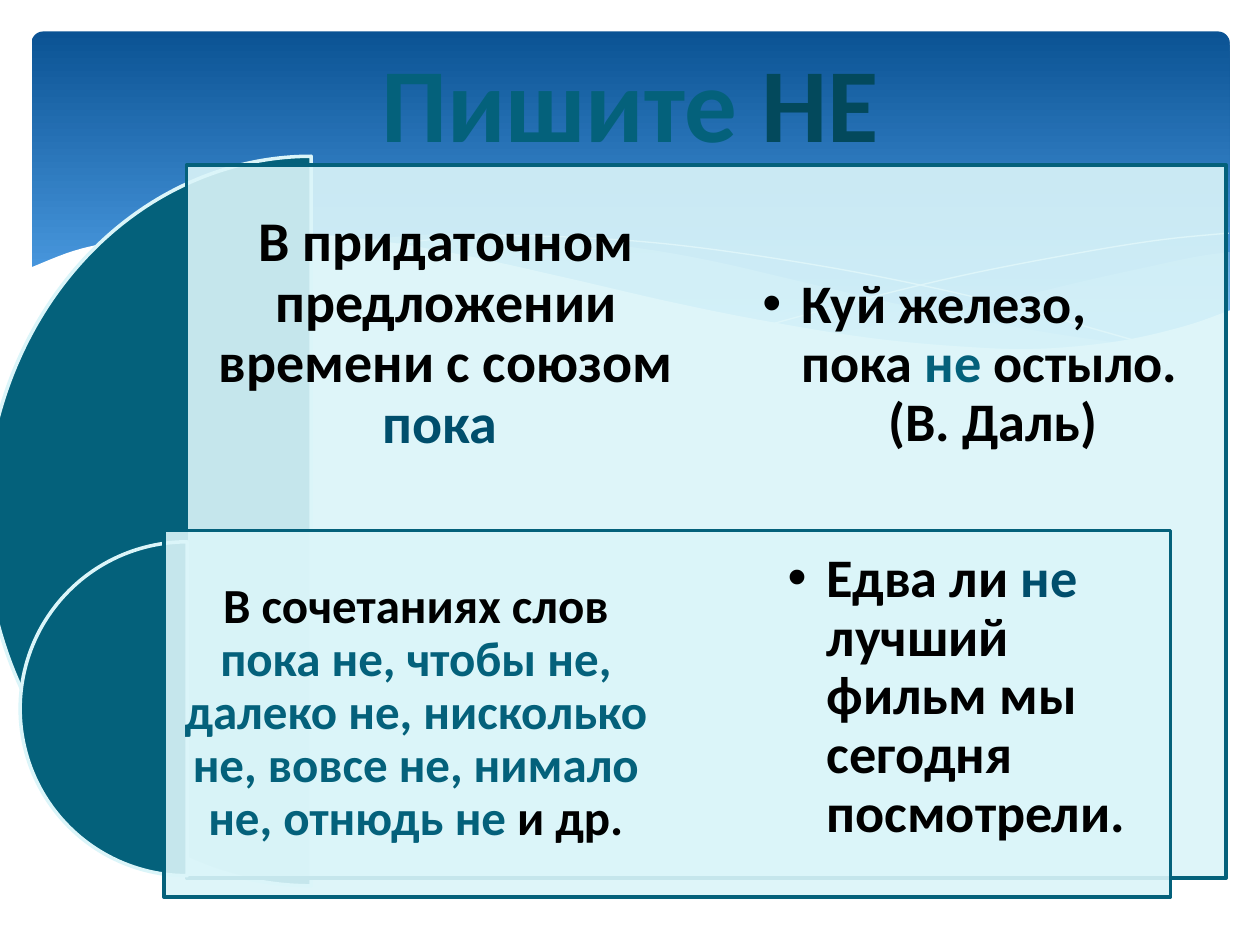
from lxml import etree
from pptx import Presentation
from pptx import util as u
from pptx.dml.color import RGBColor
from pptx.enum import shapes, text
from pptx.oxml.ns import qn

COLS, ROWS = 100, 75
CELL = u.Inches(0.1)
HUES = {"deep": "04617B", "ice": "DBF5F9", "navy": "004E6C", "dusk": "03495C",
        "sky": "0B5394", "azure": "59AAF2", "black": "000000", "white": "FFFFFF"}
KIND = shapes.MSO_SHAPE


def bend(knots, steps=6):
    """Sample a Catmull-Rom curve that runs through all the knots."""
    ends = [knots[0], *knots, knots[-1]]
    dots = [knots[0]]
    for a, b, c, d in zip(ends, ends[1:], ends[2:], ends[3:]):
        for i in range(1, steps + 1):
            t = i / steps
            dots.append(tuple(
                q + t / 2 * (r - p + t * (2 * p - 5 * q + 4 * r - s + t * (3 * (q - r) + s - p)))
                for p, q, r, s in zip(a, b, c, d)))
    return dots


class Deck:
    font = "Calibri"
    edge = 2

    def __init__(self):
        self.file = Presentation()
        self.file.slide_width, self.file.slide_height = COLS * CELL, ROWS * CELL
        self.slide = self.file.slides.add_slide(self.file.slide_layouts[6])

    def hue(self, name):
        return RGBColor.from_string(HUES[name])

    def place(self, box):
        return [u.Emu(round(n * CELL)) for n in box]

    def paint(self, shape, fill=None, line=None, alpha=100, width=edge):
        shape.shadow.inherit = False
        if fill:
            shape.fill.solid()
            shape.fill.fore_color.rgb = self.hue(fill)
            if alpha < 100:
                tone = shape.element.spPr.find(qn("a:solidFill"))[0]
                etree.SubElement(tone, qn("a:alpha"), val=str(alpha * 1000))
        else:
            shape.fill.background()
        if line:
            shape.line.color.rgb = self.hue(line)
            shape.line.width = u.Pt(width)
        else:
            shape.line.fill.background()

    def shape(self, kind, box, adjust=(), **style):
        item = self.slide.shapes.add_shape(kind, *self.place(box))
        for i, value in enumerate(adjust):
            item.adjustments[i] = value
        self.paint(item, **style)
        return item

    def half(self, box):
        self.shape(KIND.PIE, box, (54, 162), fill="deep", line="ice")

    def panel(self, box):
        self.shape(KIND.RECTANGLE, box, fill="ice", line="deep", alpha=90)

    def sky(self, box):
        item = self.shape(KIND.ROUNDED_RECTANGLE, box, (0.034,))
        item.fill.gradient()
        item.fill.gradient_angle = 270
        for stop, name, pos in zip(item.fill.gradient_stops, ("sky", "azure"), (0, 0.9)):
            stop.color.rgb, stop.position = self.hue(name), pos

    def wave(self, *curves, close=True, **style):
        dots = [self.place(dot) for knots in curves for dot in bend(knots)]
        path = self.slide.shapes.build_freeform(*dots[0])
        path.add_line_segments(dots[1:], close=close)
        self.paint(path.convert_to_shape(), **style)

    def words(self, box, size, *paras, inset=1.3, space=0.9, indents=None):
        """Write paragraphs of (text, colour) runs; indents make a left-aligned list."""
        frame = self.slide.shapes.add_textbox(*self.place(box)).text_frame
        frame.word_wrap = True
        frame.vertical_anchor = text.MSO_ANCHOR.MIDDLE
        pad, = self.place([inset])
        frame.margin_left = frame.margin_right = pad
        frame.margin_top = frame.margin_bottom = pad
        for i, runs in enumerate(paras):
            para = frame.add_paragraph() if i else frame.paragraphs[0]
            para.line_spacing = space
            para.alignment = text.PP_ALIGN.LEFT if indents else text.PP_ALIGN.CENTER
            if indents:
                self.indent(para, indents[i], bullet=i == 0)
            for part, name in runs:
                run = para.add_run()
                run.text = part
                run.font.name, run.font.size, run.font.bold = self.font, u.Pt(size), True
                run.font.color.rgb = self.hue(name)

    def indent(self, para, left, bullet):
        props = para._p.get_or_add_pPr()
        room, = self.place([left])
        props.set("marL", str(room))
        if bullet:
            props.set("indent", str(-room))
            etree.SubElement(props, qn("a:buFont"), typeface="Arial")
            etree.SubElement(props, qn("a:buChar"), char="•")


def backdrop(deck):
    deck.sky((2.5, 2.5, 95.1, 27))
    deck.wave([(97.6, 20), (94.8, 20.4), (90.6, 21.3), (86.1, 22.3), (77.9, 24.2), (66.1, 26.5)],
              [(66.1, 26.5), (70.5, 27.1), (75.7, 27.6), (81.4, 27.8), (86.3, 27.5),
               (90.5, 26.9), (94.2, 25.9), (97.6, 24.7)], fill="ice", alpha=29)
    deck.wave([(89.3, 27.3), (83.7, 26.5), (77.5, 25.4), (70.6, 24), (62.9, 22.2), (56.9, 20.8),
               (51.4, 19.8), (44.2, 18.9), (38, 18.5), (32.8, 18.7), (28.6, 19.1)],
              [(28.6, 19.1), (34.2, 19.9), (40.4, 21.1), (49.1, 23.2), (56.6, 24.8),
               (63.4, 26.1), (69.5, 27), (76.1, 27.7), (82.8, 27.8), (89.3, 27.3)],
              fill="ice", alpha=40)
    thin = {"close": False, "line": "white", "width": 0}
    deck.wave([(30.9, 19.5), (34.4, 19), (40.1, 18.7), (46.9, 18.9), (53.3, 19.4), (60.8, 20.4),
               (69.5, 21.9), (79.5, 24.1), (90.7, 27.2)], **thin)
    deck.wave([(61.3, 25.7), (69.5, 23.5), (77.6, 21.6), (86.6, 19.9), (92.4, 19), (97.5, 18.5)],
              **thin)
    deck.wave([(97.7, 24.6), (94, 25.9), (88.7, 27.1), (82.3, 27.7), (76.1, 27.5), (68.8, 26.8),
               (60.3, 25.4), (52.9, 23.9), (44.7, 22), (36.5, 20.2), (29.2, 19), (23, 18.5),
               (17.7, 18.4), (13.2, 18.6), (9.5, 19.1), (5.9, 19.9), (2.3, 21.3)],
              [(2.3, 32.9), (97.7, 32.9)], fill="white")


def main():
    deck = Deck()
    backdrop(deck)
    deck.half((-1.2, 12.4, 51.8, 57.9))
    deck.panel((14.8, 13.1, 82.5, 56.6))
    deck.words((14.8, 13.1, 41.2, 26.9), 32,
               [("В придаточном предложении времени с союзом ", "black"), ("пока ", "navy")])
    deck.half((1.6, 43, 26.5, 26.5))
    deck.panel((13, 42.1, 79.9, 29.1))
    deck.words((13, 42.1, 40, 29.1), 28,
               [("В сочетаниях слов ", "black"),
                ("пока не, чтобы не, далеко не, нисколько не, вовсе не, нимало не, отнюдь не ",
                 "deep"), ("и др.", "black")], inset=1.2)
    deck.words((59.2, 14.7, 36.5, 28.5), 31,
               [("Куй железо, пока ", "black"), ("не ", "deep"), ("остыло.", "black")],
               [("(В. Даль)", "black")], indents=(3.1, 10))
    deck.words((61.2, 42.1, 32.5, 26.5), 31,
               [("Едва ли ", "black"), ("не", "navy"),
                (" лучший фильм мы сегодня посмотрели.", "black")], indents=(3.1,))
    deck.words((26.4, 1.3, 47.2, 13.4), 60, [("Пишите ", "deep"), ("НЕ", "dusk")],
               inset=0.5, space=1)
    deck.file.save("out.pptx")


if __name__ == "__main__":
    main()
